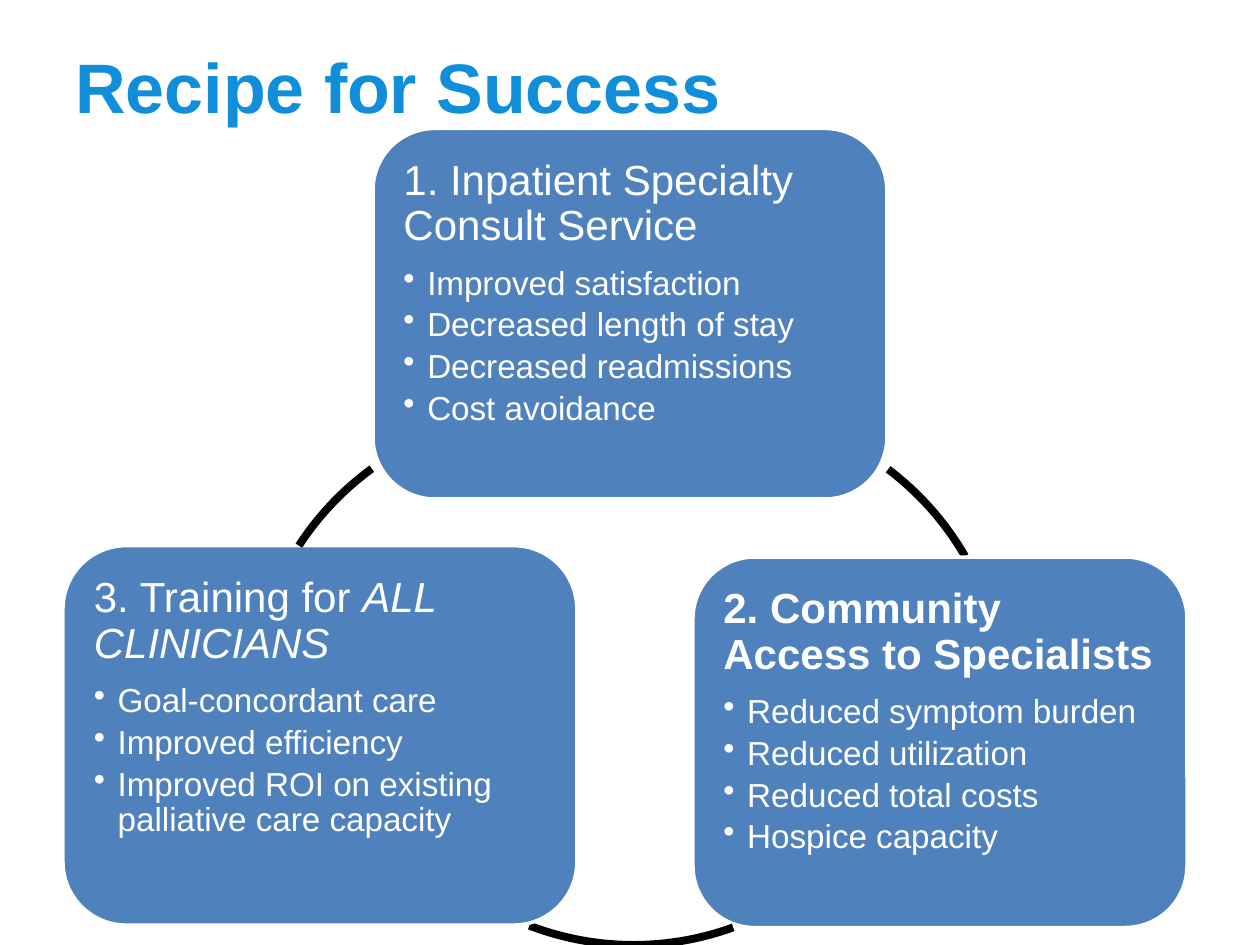
import pptx
import pptx.util
import pptx.dml.color
import pptx.enum.shapes
import pptx.enum.text
import pptx.oxml.ns
import lxml.etree

Cm, Pt = pptx.util.Cm, pptx.util.Pt
KIND = pptx.enum.shapes.MSO_SHAPE
TOP = pptx.enum.text.MSO_ANCHOR.TOP
LEFT = pptx.enum.text.PP_ALIGN.LEFT
HUES = {"title": "118ED9", "card": "4F81BD", "text": "FFFFFF", "edge": "FFFFFF", "arc": "000000"}


def hue(name):
    return pptx.dml.color.RGBColor.from_string(HUES[name])


def style(item, form):
    for key, value in form.items():
        setattr(item, key, value)


deck = pptx.Presentation()
style(deck, {"slide_width": Cm(25.4), "slide_height": Cm(19.05)})
slide = deck.slides.add_slide(deck.slide_layouts[6])

# Formats
inset = dict.fromkeys(("margin_left", "margin_top", "margin_right", "margin_bottom"), Cm(0.25))
frame = {**inset, "word_wrap": True, "vertical_anchor": TOP}
head = {"alignment": LEFT, "line_spacing": 0.9, "space_after": Pt(9.6)}
item = {"alignment": LEFT, "line_spacing": 0.9, "space_after": Pt(3.3), "level": 1}
big = {"name": "Arial", "size": Pt(24)}
small = {"name": "Arial", "size": Pt(19)}

# Cards: box, heading runs, points; then the arc that leads on: corner, angles
cards = [
    ((7.52, 2.59, 10.36, 7.47),
     [("1. Inpatient Specialty Consult Service", {})],
     ["Improved satisfaction", "Decreased length of stay",
      "Decreased readmissions", "Cost avoidance"],
     (8.51, 8.28), (-53, -30)),
    ((13.97, 11.23, 9.96, 7.47),
     [("2. Community Access to Specialists", {"bold": True})],
     ["Reduced symptom burden", "Reduced utilization",
      "Reduced total costs", "Hospice capacity"],
     (6.91, 7.32), (70, 111)),
    ((1.27, 11, 10.36, 7.65),
     [("3. Training for ", {}), ("ALL CLINICIANS", {"italic": True})],
     ["Goal-concordant care", "Improved efficiency",
      "Improved ROI on existing palliative care capacity"],
     (5.08, 8.33), (213, 234)),
]
span = Cm(11.73)

for box, runs, points, spot, turn in cards:
    # Rounded card
    card = slide.shapes.add_shape(KIND.ROUNDED_RECTANGLE, *map(Cm, box))
    card.shadow.inherit = False
    card.fill.solid()
    card.fill.fore_color.rgb = hue("card")
    card.line.color.rgb = hue("edge")
    card.line.width = Pt(2)
    style(card.text_frame, frame)

    # Heading
    para = card.text_frame.paragraphs[0]
    style(para, head)
    for text, extra in runs:
        run = para.add_run()
        run.text = text
        style(run.font, {**big, **extra})
        run.font.color.rgb = hue("text")

    # Bulleted points
    for text in points:
        para = card.text_frame.add_paragraph()
        style(para, item)
        props = para._p.get_or_add_pPr()
        props.set("marL", str(Cm(0.48)))
        props.set("indent", str(-Cm(0.48)))
        mark = lxml.etree.SubElement(props, pptx.oxml.ns.qn("a:buChar"))
        mark.set("char", "•")
        run = para.add_run()
        run.text = text
        style(run.font, small)
        run.font.color.rgb = hue("text")

    # Arc of the cycle; an adjustment unit is 0.6 per degree
    arc = slide.shapes.add_shape(KIND.ARC, *map(Cm, spot), span, span)
    arc.shadow.inherit = False
    for spin, angle in enumerate(turn):
        arc.adjustments[spin] = angle % 360 * 0.6
    arc.fill.background()
    arc.line.color.rgb = hue("arc")
    arc.line.width = Pt(4.5)

# Title
title = slide.shapes.add_textbox(Cm(1.27), Cm(0.76), Cm(22.86), Cm(5.59))
style(title.text_frame, {"word_wrap": True, "vertical_anchor": TOP})
run = title.text_frame.paragraphs[0].add_run()
run.text = "Recipe for Success"
style(run.font, {"name": "Arial", "size": Pt(40), "bold": True})
run.font.color.rgb = hue("title")

deck.save("out.pptx")
